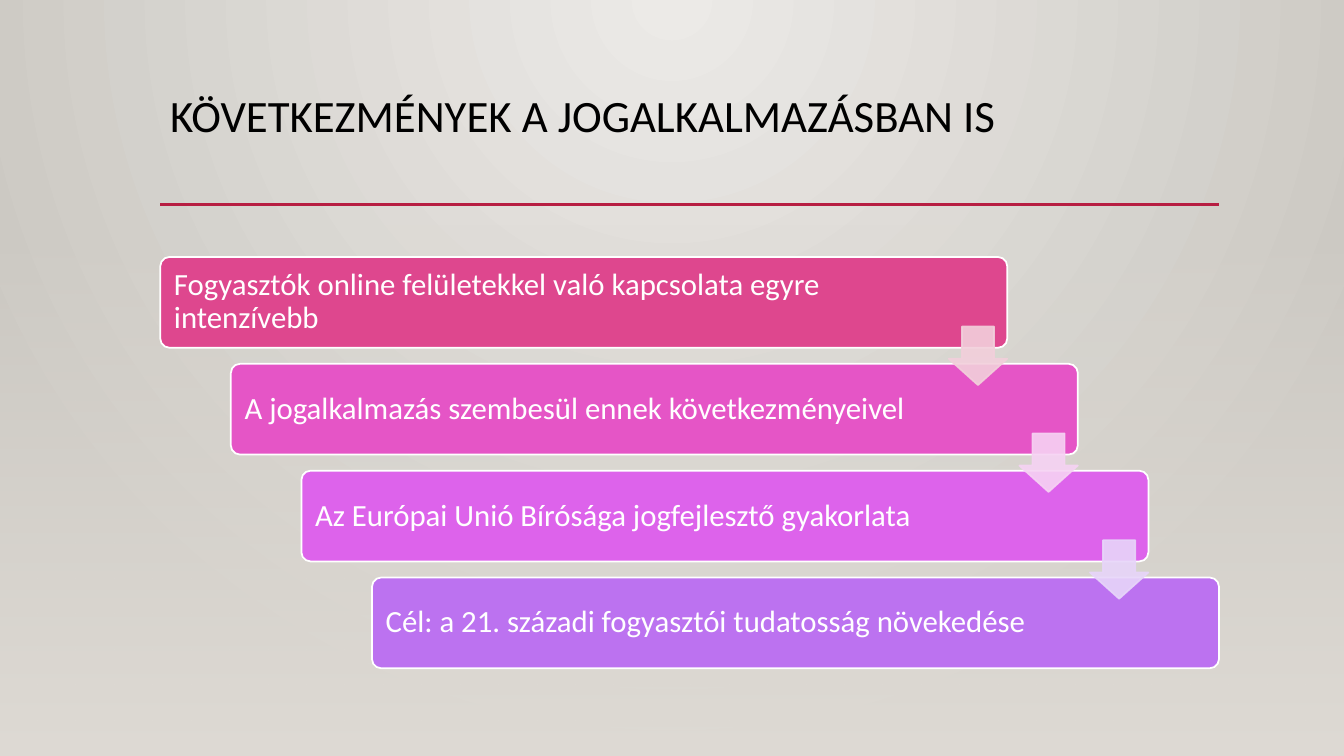
import pptx
import pptx.util
from lxml import etree
from pptx.dml.color import RGBColor
from pptx.enum.shapes import MSO_CONNECTOR, MSO_SHAPE
from pptx.enum.text import MSO_ANCHOR, PP_ALIGN
from pptx.oxml import parse_xml
from pptx.oxml.ns import nsdecls, qn
from pptx.util import Inches, Pt

TITLE = "KÖVETKEZMÉNYEK A JOGALKALMAZÁSBAN IS"
STEPS = [
    ("Fogyasztók online felületekkel való kapcsolata egyre intenzívebb", RGBColor(0xDE, 0x47, 0x8E)),
    ("A jogalkalmazás szembesül ennek következményeivel", RGBColor(0xE5, 0x55, 0xC6)),
    ("Az Európai Unió Bírósága jogfejlesztő gyakorlata", RGBColor(0xDD, 0x63, 0xEB)),
    ("Cél: a 21. századi fogyasztói tudatosság növekedése", RGBColor(0xBC, 0x72, 0xF0)),
]
ARROW_COLORS = [RGBColor(0xF2, 0xCF, 0xDB), RGBColor(0xF6, 0xD2, 0xF3), RGBColor(0xE7, 0xD5, 0xF9)]
BLACK = RGBColor(0, 0, 0)
WHITE = RGBColor(0xFF, 0xFF, 0xFF)
CRIMSON = RGBColor(0xB7, 0x1E, 0x42)
GLOW_LIGHT = RGBColor(0xEC, 0xEA, 0xE7)
GLOW_DARK = RGBColor(0xCA, 0xC7, 0xC1)
FLOOR = RGBColor(0xDF, 0xDB, 0xD5)

FONT = "Calibri"
SLIDE_WIDTH, SLIDE_HEIGHT = 13.33, 7.5
LEFT, CONTENT_WIDTH = 1.59, 10.5
RULE_TOP, FLOOR_TOP = 2.03, 2.21
STEP_TOP, STEP_WIDTH, STEP_HEIGHT = 2.55, 8.4, 0.9
STEP_DX = (CONTENT_WIDTH - STEP_WIDTH) / (len(STEPS) - 1)
STEP_DY = 1.06
ARROW_SIZE, ARROW_DROP = 0.58, 0.69


def gradient(stops, direction):
    """Build a gradient fill from (percent, color, opacity percent) stops."""
    stop_xml = "".join(
        f'<a:gs pos="{position * 1000}"><a:srgbClr val="{color}">'
        f'<a:alpha val="{opacity * 1000}"/></a:srgbClr></a:gs>'
        for position, color, opacity in stops)
    return parse_xml(f'<a:gradFill {nsdecls("a")} rotWithShape="1">'
                     f'<a:gsLst>{stop_xml}</a:gsLst>{direction}</a:gradFill>')


def replace_solid_fill(properties, fill):
    properties.replace(properties.find(qn("a:solidFill")), fill)


def add_shape(slide, preset, left, top, width, height, fill, line=None):
    shape = slide.shapes.add_shape(preset, Inches(left), Inches(top), Inches(width), Inches(height))
    shape.shadow.inherit = False
    shape.fill.solid()
    shape.fill.fore_color.rgb = fill
    if line is None:
        shape.line.fill.background()
    else:
        shape.line.color.rgb = line
        shape.line.width = Pt(1.25)
    return shape


def write(shape, text, size, color):
    frame = shape.text_frame
    frame.word_wrap = True
    paragraph = frame.paragraphs[0]
    paragraph.text = text
    paragraph.alignment = PP_ALIGN.LEFT
    paragraph.line_spacing = 0.9
    paragraph.font.name = FONT
    paragraph.font.size = Pt(size)
    paragraph.font.color.rgb = color
    return frame


def add_backdrop(slide):
    slide.background.fill.solid()
    slide.background.fill.fore_color.rgb = GLOW_LIGHT
    replace_solid_fill(
        slide.element.find(".//" + qn("p:bgPr")),
        gradient([(0, GLOW_LIGHT, 100), (100, GLOW_DARK, 100)],
                 '<a:path path="circle"><a:fillToRect l="43000" r="43000" b="100000"/></a:path>'))
    floor = add_shape(slide, MSO_SHAPE.RECTANGLE, 0, FLOOR_TOP,
                      SLIDE_WIDTH, SLIDE_HEIGHT - FLOOR_TOP, FLOOR)
    replace_solid_fill(
        floor.element.spPr,
        gradient([(0, FLOOR, 0), (100, FLOOR, 100)], '<a:lin ang="5400000" scaled="0"/>'))


def add_heading(slide):
    title = slide.shapes.add_textbox(Inches(LEFT), Inches(0.88), Inches(CONTENT_WIDTH), Inches(1.15))
    write(title, TITLE, 32, BLACK)
    rule = slide.shapes.add_connector(
        MSO_CONNECTOR.STRAIGHT, Inches(LEFT), Inches(RULE_TOP),
        Inches(LEFT + CONTENT_WIDTH), Inches(RULE_TOP))
    rule.line.color.rgb = CRIMSON
    rule.line.width = Pt(2.5)
    etree.SubElement(rule.element.spPr, qn("a:effectLst"))


def add_step(slide, index, text, color):
    step = add_shape(slide, MSO_SHAPE.ROUNDED_RECTANGLE, LEFT + index * STEP_DX,
                     STEP_TOP + index * STEP_DY, STEP_WIDTH, STEP_HEIGHT, color, WHITE)
    step.adjustments[0] = 0.1
    frame = write(step, text, 22, WHITE)
    frame.vertical_anchor = MSO_ANCHOR.MIDDLE
    frame.margin_left = Inches(0.11)
    frame.margin_right = Inches(1.4)


def add_arrow(slide, index, color):
    """Place the arrow at the lower right corner of the step with this index."""
    arrow = add_shape(slide, MSO_SHAPE.DOWN_ARROW,
                      LEFT + index * STEP_DX + STEP_WIDTH - ARROW_SIZE,
                      STEP_TOP + index * STEP_DY + ARROW_DROP,
                      ARROW_SIZE, ARROW_SIZE, color, color)
    arrow.adjustments[0] = 0.55
    arrow.adjustments[1] = 0.45
    for color_element in arrow.element.spPr.iter(qn("a:srgbClr")):
        etree.SubElement(color_element, qn("a:alpha"), val="90000")


def main():
    presentation = pptx.Presentation()
    presentation.slide_width = Inches(SLIDE_WIDTH)
    presentation.slide_height = Inches(SLIDE_HEIGHT)
    slide = presentation.slides.add_slide(presentation.slide_layouts[6])
    add_backdrop(slide)
    add_heading(slide)
    for index, (text, color) in enumerate(STEPS):
        add_step(slide, index, text, color)
    for index, color in enumerate(ARROW_COLORS):
        add_arrow(slide, index, color)
    presentation.save("out.pptx")


if __name__ == "__main__":
    main()
